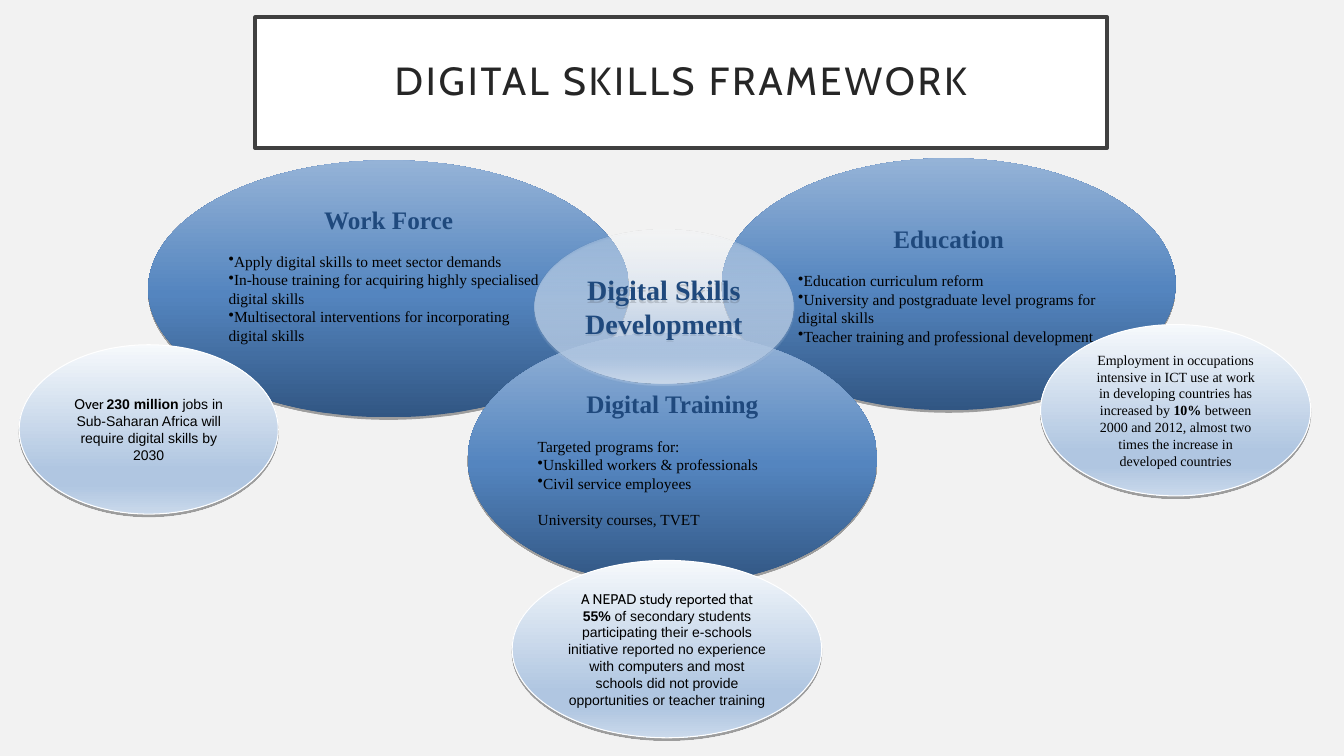
"""Builds the Digital Skills Framework slide."""
from lxml.etree import SubElement
from pptx import Presentation
from pptx.dml.color import RGBColor
from pptx.enum.shapes import MSO_SHAPE
from pptx.enum.text import MSO_ANCHOR, PP_ALIGN
from pptx.oxml.ns import qn
from pptx.util import Inches, Pt

PAPER = RGBColor(0xF2, 0xF2, 0xF2)
WHITE = RGBColor(0xFF, 0xFF, 0xFF)
BLACK = RGBColor(0, 0, 0)
FRAME = RGBColor(0x40, 0x40, 0x40)
TITLE_INK = RGBColor(0x26, 0x26, 0x26)
NAVY = RGBColor(0x1F, 0x49, 0x7D)
DEEP_BLUE = RGBColor(0x31, 0x56, 0x83)
MID_BLUE = RGBColor(0x54, 0x85, 0xBF)
SOFT_BLUE = RGBColor(0x95, 0xB3, 0xD7)
ICE = RGBColor(0xF6, 0xF9, 0xFC)
MIST = RGBColor(0xB0, 0xC6, 0xE1)
HAZE = RGBColor(0xCA, 0xD9, 0xEB)

SERIF, SANS, CABIN = "Times New Roman", "Arial", "Cabin"
PILLAR_STOPS = [(0, DEEP_BLUE, 100), (48, MID_BLUE, 100), (100, SOFT_BLUE, 100)]
FACT_STOPS = [(0, ICE, 100), (74, MIST, 100), (83, MIST, 100), (100, HAZE, 100)]
CORE_STOPS = [(0, ICE, 22), (74, MIST, 80), (83, MIST, 87), (100, HAZE, 100)]
BLANK_LINE = Pt(12.65)

prs = Presentation()
prs.slide_width, prs.slide_height = Inches(13.33), Inches(7.5)
slide = prs.slides.add_slide(prs.slide_layouts[6])
slide.background.fill.solid()
slide.background.fill.fore_color.rgb = PAPER


def add_ellipse(box, stops, angle):
    """Add an ellipse with a gradient and a thin shadow below it."""
    ellipse = slide.shapes.add_shape(MSO_SHAPE.OVAL, *map(Inches, box))
    ellipse.line.fill.background()
    ellipse.fill.gradient()
    ellipse.fill.gradient_angle = angle
    properties = ellipse._element.spPr
    stop_list = properties.find(qn("a:gradFill")).find(qn("a:gsLst"))
    for old_stop in list(stop_list):
        stop_list.remove(old_stop)
    for position, color, opacity in stops:
        stop = SubElement(stop_list, qn("a:gs"), pos=str(position * 1000))
        tint = SubElement(stop, qn("a:srgbClr"), val=str(color))
        if opacity < 100:
            SubElement(tint, qn("a:alpha"), val=str(opacity * 1000))
    ellipse.shadow.inherit = False
    shadow = SubElement(properties.find(qn("a:effectLst")), qn("a:outerShdw"),
                        blurRad="0", dist=str(Pt(1.8)), dir="5400000", rotWithShape="0")
    shade = SubElement(shadow, qn("a:srgbClr"), val=str(BLACK))
    SubElement(shade, qn("a:alpha"), val="35000")
    ellipse.text_frame.word_wrap = True
    ellipse.text_frame.vertical_anchor = MSO_ANCHOR.MIDDLE
    return ellipse


def style(run, font_name, size, color, bold=False):
    """Set the font of one run."""
    run.font.name, run.font.size, run.font.bold = font_name, Pt(size), bold
    run.font.color.rgb = color


banner = slide.shapes.add_shape(MSO_SHAPE.RECTANGLE, Inches(2.53), Inches(0.17),
                                Inches(8.45), Inches(1.3))
banner.shadow.inherit = False
banner.fill.solid()
banner.fill.fore_color.rgb = WHITE
banner.line.color.rgb = FRAME
banner.line.width = Pt(2.5)
banner.text_frame.word_wrap = True
banner.text_frame.vertical_anchor = MSO_ANCHOR.MIDDLE
banner.text_frame.text = "DIGITAL SKILLS FRAMEWORK"
headline = banner.text_frame.paragraphs[0]
headline.alignment = PP_ALIGN.CENTER
headline.line_spacing = 0.9
style(headline.runs[0], CABIN, 28, TITLE_INK)
headline.runs[0]._r.get_or_add_rPr().set("spc", "200")

pillars = [
    ((7.16, 1.57, 4.5, 2.5), 0.05, "Education", [
        ("•", "Education curriculum reform", 0),
        ("•", "University and postgraduate level programs for digital skills", 0),
        ("•", "Teacher training and professional development", 0)]),
    ((1.47, 1.59, 4.77, 2.55), 0.34, "Work Force", [
        ("•", "Apply digital skills to meet sector demands", 0),
        ("•", "In-house training for acquiring highly specialised digital skills", 0),
        ("•", "Multisectoral interventions for incorporating digital skills", 0)]),
    ((4.64, 3.3, 4.06, 2.5), 0.05, "Digital Training", [
        ("", "Targeted programs for:", 0),
        ("•", "Unskilled workers & professionals", 0),
        ("•", "Civil service employees", 0),
        ("", "University courses, TVET", BLANK_LINE)]),
]
for box, bottom_inset, heading, points in pillars:
    pillar = add_ellipse(box, PILLAR_STOPS, 90).text_frame
    pillar.margin_bottom = Inches(bottom_inset)
    pillar.text = heading
    pillar.paragraphs[0].alignment = PP_ALIGN.CENTER
    pillar.paragraphs[0].space_after = BLANK_LINE
    style(pillar.paragraphs[0].runs[0], SERIF, 18, NAVY, True)
    for bullet, wording, gap in points:
        point = pillar.add_paragraph()
        point.text = wording
        point.alignment = PP_ALIGN.LEFT
        point.space_before = gap
        style(point.runs[0], SERIF, 11, BLACK)
        if bullet:
            SubElement(point._p.get_or_add_pPr(), qn("a:buChar"), char=bullet)

core = add_ellipse((5.3, 2.28, 2.57, 1.52), CORE_STOPS, 270).text_frame
core.text = "Digital Skills Development"
core.paragraphs[0].alignment = PP_ALIGN.CENTER
style(core.paragraphs[0].runs[0], SERIF, 20, NAVY, True)

facts = [
    ((0.19, 3.42, 2.57, 1.68), CABIN, SANS, "Over ", "230 million",
     " jobs in Sub-Saharan Africa will require digital skills by 2030"),
    ((10.32, 3.22, 2.68, 1.7), SERIF, SERIF,
     "Employment in occupations intensive in ICT use at work in developing countries "
     "has increased by ", "10%",
     " between 2000 and 2012, almost two times the increase in developed countries"),
    ((5.08, 5.56, 3.07, 1.76), CABIN, SANS, "A NEPAD study reported that ", "55%",
     " of secondary students participating their e-schools initiative reported no "
     "experience with computers and most schools did not provide opportunities or "
     "teacher training"),
]
for box, lead_font, body_font, lead, figure, rest in facts:
    fact = add_ellipse(box, FACT_STOPS, 270)
    fact.line.color.rgb = WHITE
    fact.line.width = Pt(0.75)
    sentence = fact.text_frame.paragraphs[0]
    sentence.alignment = PP_ALIGN.CENTER
    for wording, font_name, bold in ((lead, lead_font, False), (figure, body_font, True),
                                     (rest, body_font, False)):
        run = sentence.add_run()
        run.text = wording
        style(run, font_name, 10, BLACK, bold)

prs.save("out.pptx")
